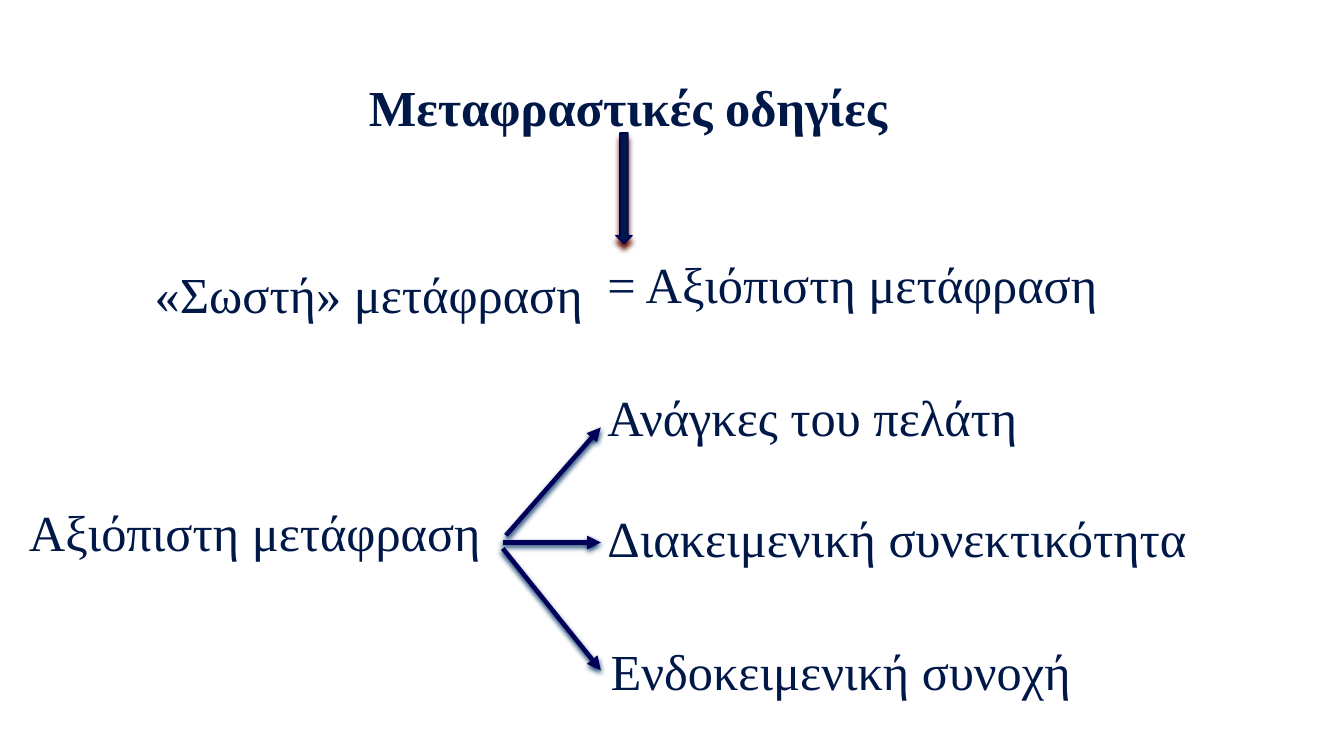
from lxml import etree
from pptx import Presentation
from pptx.dml.color import RGBColor
from pptx.enum.shapes import MSO_CONNECTOR, MSO_SHAPE
from pptx.enum.text import MSO_ANCHOR, MSO_AUTO_SIZE, PP_ALIGN
from pptx.oxml.ns import qn
from pptx.util import Cm, Pt

NAVY = RGBColor(0x00, 0x18, 0x48)
INDIGO = RGBColor(0x00, 0x00, 0x58)
RED_SHADOW = RGBColor(0x6B, 0x12, 0x09)
BLUE_SHADOW = RGBColor(0x00, 0x33, 0x66)

STRAIGHT = MSO_CONNECTOR.STRAIGHT
DOWN_ARROW = MSO_SHAPE.DOWN_ARROW
TOP = MSO_ANCHOR.TOP
NO_FIT = MSO_AUTO_SIZE.NONE
LEFT, CENTER = PP_ALIGN.LEFT, PP_ALIGN.CENTER
TITLE_ONLY = 5


class SlideBuilder:
    font = {"name": "Times New Roman", "size": Pt(36), "bold": False}
    frame = {"word_wrap": True, "auto_size": NO_FIT, "vertical_anchor": TOP}

    def __init__(self, s):
        self.s = s

    def fill_text(self, sp, text, align=LEFT, spacing=1.0, **font):
        tf = sp.text_frame
        p = tf.paragraphs[0]
        r = p.add_run()
        r.text = text
        formats = (
            (tf, self.frame),
            (p, {"alignment": align, "line_spacing": spacing}),
            (r.font, {**self.font, **font}),
        )
        for target, values in formats:
            for name, value in values.items():
                setattr(target, name, value)
        r.font.color.rgb = NAVY

    def title(self, text, x, y, w, h):
        sp = self.s.shapes.title
        sp.left, sp.top, sp.width, sp.height = Cm(x), Cm(y), Cm(w), Cm(h)
        self.fill_text(sp, text, CENTER, 1.5, bold=True)

    def text(self, text, x, y, w, h=1.8, **style):
        sp = self.s.shapes.add_textbox(Cm(x), Cm(y), Cm(w), Cm(h))
        self.fill_text(sp, text, **style)

    def outline(self, sp, width):
        sp.line.color.rgb = INDIGO
        sp.line.width = Pt(width)

    def shadow(self, sp, color, distance):
        spPr = sp._element.spPr
        effects = spPr.find(qn("a:effectLst"))
        if effects is None:
            effects = etree.SubElement(spPr, qn("a:effectLst"))
        outer = etree.SubElement(
            effects, qn("a:outerShdw"), blurRad=str(Pt(4)),
            dist=str(Pt(distance)), dir="5400000", rotWithShape="0")
        etree.SubElement(outer, qn("a:srgbClr"), val=str(color))

    def block_arrow(self, x, y, w, h):
        sp = self.s.shapes.add_shape(DOWN_ARROW, Cm(x), Cm(y), Cm(w), Cm(h))
        sp.shadow.inherit = False
        sp.fill.solid()
        sp.fill.fore_color.rgb = NAVY
        self.outline(sp, 1)
        self.shadow(sp, RED_SHADOW, 4)

    def arrow(self, x1, y1, x2, y2):
        sp = self.s.shapes.add_connector(
            STRAIGHT, Cm(x1), Cm(y1), Cm(x2), Cm(y2))
        self.outline(sp, 3.25)
        ln = sp._element.spPr.find(qn("a:ln"))
        etree.SubElement(ln, qn("a:tailEnd"), type="triangle")
        self.shadow(sp, BLUE_SHADOW, 2)


def main():
    prs = Presentation()
    prs.slide_width, prs.slide_height = Cm(33.87), Cm(19.05)
    b = SlideBuilder(prs.slides.add_slide(prs.slide_layouts[TITLE_ONLY]))

    b.title("Μεταφραστικές οδηγίες", 7.37, 1.04, 16.92, 2.29)
    b.block_arrow(15.52, 3.35, 0.41, 2.79)
    b.text("«Σωστή» μετάφραση", 3.53, 5.74, 11.53, 2.29,
           align=CENTER, spacing=1.5)
    b.text("= Αξιόπιστη μετάφραση", 15.06, 6.25, 16.99)
    b.text("Αξιόπιστη μετάφραση", 0.48, 12.5, 13.74)

    criteria = (
        ("Ανάγκες του πελάτη", 15.06, 9.6, (12.75, 13.49), 10.77),
        ("Διακειμενική συνεκτικότητα", 15.06, 12.65, (12.67, 13.67), 13.67),
        ("Ενδοκειμενική συνοχή", 15.14, 16, (12.67, 13.82), 16.89),
    )
    for text, x, y, start, tip in criteria:
        b.arrow(*start, 15.14, tip)
        b.text(text, x, y, 16.13)

    prs.save("out.pptx")


if __name__ == "__main__":
    main()
